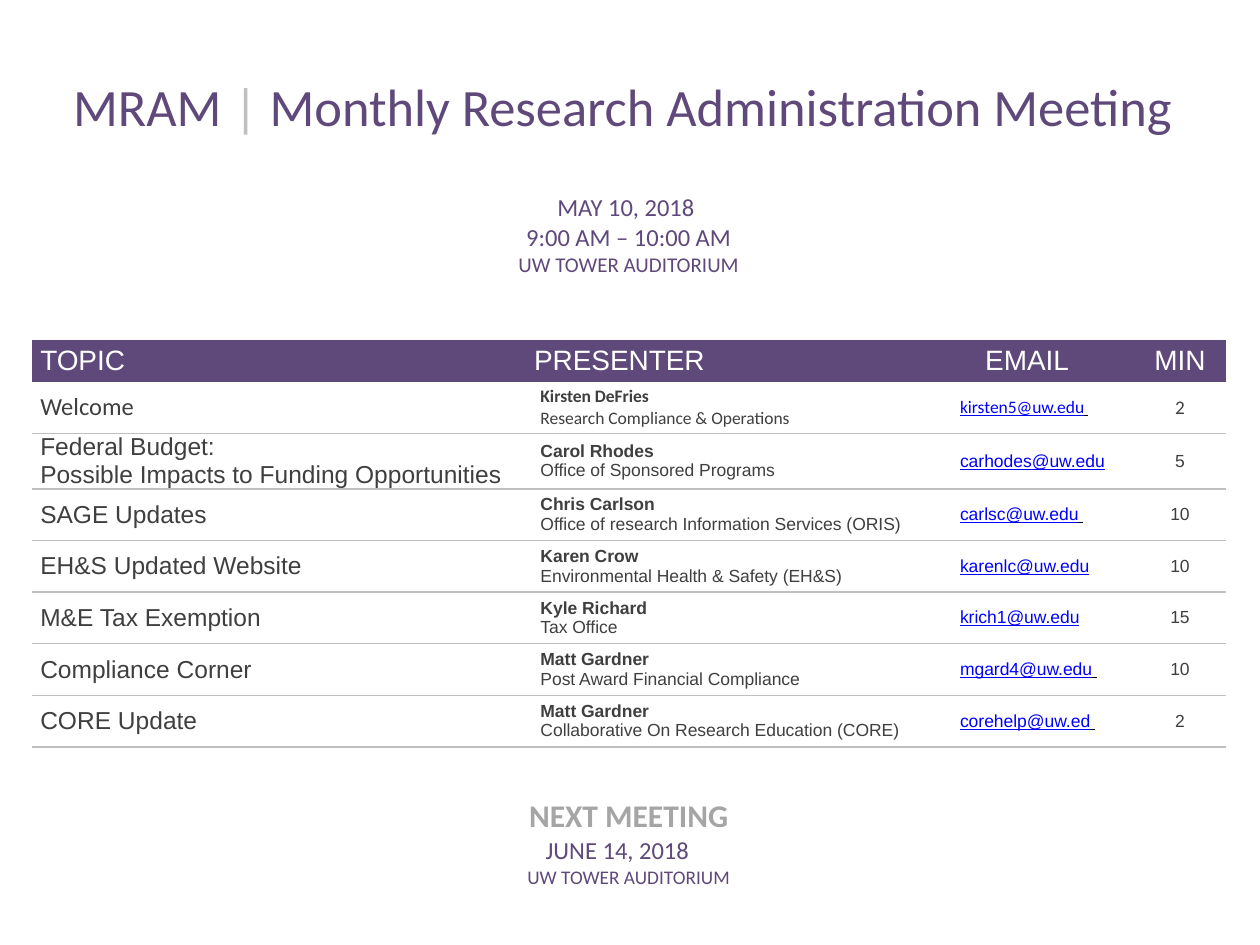
import pptx
import pptx.dml.color
import pptx.enum.text
import pptx.oxml
import pptx.oxml.ns
import pptx.util

Inches, Pt = pptx.util.Inches, pptx.util.Pt
ALIGN, ANCHOR = pptx.enum.text.PP_ALIGN, pptx.enum.text.MSO_ANCHOR
PURPLE, SILVER, GRAY = "5F497A", "BFBFBF", "A5A5A5"
DARK, LINK, WHITE, BLACK = "3F3F3F", "0000FF", "FFFFFF", "000000"
NO_STYLE = "{2D5ABB26-0587-4C30-8999-92F81FD0307C}"

# Content
TITLE = [("MRAM ", PURPLE), ("|", SILVER), (" Monthly Research Administration Meeting ", PURPLE)]
WHEN = [("MAY 10, 2018 ", 14), ("9:00 AM – 10:00 AM", 14), ("UW TOWER AUDITORIUM", 12)]
HEADERS = ["TOPIC", "PRESENTER", "EMAIL", "MIN"]
# topic lines, presenter, office, email, underlined space after it, minutes
AGENDA = [
    (["Welcome"], "Kirsten DeFries", "Research Compliance & Operations",
     "kirsten5@uw.edu", True, 2),
    (["Federal Budget:", "Possible Impacts to Funding Opportunities"], "Carol Rhodes",
     "Office of Sponsored Programs", "carhodes@uw.edu", False, 5),
    (["SAGE Updates"], "Chris Carlson", "Office of research Information Services (ORIS)",
     "carlsc@uw.edu", True, 10),
    (["EH&S Updated Website"], "Karen Crow", "Environmental Health & Safety (EH&S)",
     "karenlc@uw.edu", False, 10),
    (["M&E Tax Exemption"], "Kyle Richard", "Tax Office", "krich1@uw.edu", False, 15),
    (["Compliance Corner"], "Matt Gardner", "Post Award Financial Compliance",
     "mgard4@uw.edu", True, 10),
    (["CORE Update"], "Matt Gardner", "Collaborative On Research Education (CORE)",
     "corehelp@uw.ed", True, 2),
]
# text, size, colour, bold, left indent
NEXT = [("NEXT MEETING", 18, GRAY, True, 0.18), ("JUNE 14, 2018", 14, PURPLE, False, 0),
        ("UW TOWER AUDITORIUM", 11, PURPLE, False, 0.18)]

COLS = [3.92, 3.33, 1.5, 0.73]
ROWS = [0.62, 1.58, 0.33] + [0.44 if len(a[0]) > 1 else 0.41 for a in AGENDA] + [1.13]


def rgb(color):
    return pptx.dml.color.RGBColor.from_string(color)


def style(font, size, color, name="Arial", bold=False):
    font.size, font.name, font.bold = Pt(size), name, bold
    font.color.rgb = rgb(color)


def setup(cell, fill=WHITE, left=0.07, right=0.07, bottom=0, anchor=ANCHOR.MIDDLE):
    cell.fill.solid()
    cell.fill.fore_color.rgb = rgb(fill)
    cell.margin_left, cell.margin_right = Inches(left), Inches(right)
    cell.margin_top, cell.margin_bottom = 0, Inches(bottom)
    cell.vertical_anchor = anchor
    return cell.text_frame


def rule_below(cell):
    ns = pptx.oxml.ns.nsdecls("a")
    line = pptx.oxml.parse_xml(
        f'<a:lnB {ns} w="12700"><a:solidFill><a:srgbClr val="{SILVER}"/></a:solidFill></a:lnB>')
    cell._tc.get_or_add_tcPr().insert(0, line)


def add_lines(tf, lines, align=ALIGN.LEFT):
    """Each line: text, size, colour, font name, bold, left indent."""
    for i, (text, size, color, name, bold, indent) in enumerate(lines):
        p = tf.paragraphs[0] if i == 0 else tf.add_paragraph()
        p.alignment = align
        if indent:
            p._p.get_or_add_pPr().set("marL", str(Inches(indent)))
        p.add_run().text = text
        style(p.font, size, color, name, bold)


prs = pptx.Presentation()
prs.slide_width, prs.slide_height = Inches(10), Inches(7.5)
s = prs.slides.add_slide(prs.slide_layouts[6])

# Table frame
table = s.shapes.add_table(len(ROWS), len(COLS), Inches(0.25), Inches(0.5),
                           Inches(sum(COLS)), Inches(sum(ROWS))).table
table.first_row = table.horz_banding = False
table._tbl.tblPr.find(pptx.oxml.ns.qn("a:tableStyleId")).text = NO_STYLE
for col, width in zip(table.columns, COLS):
    col.width = Inches(width)
for row, height in zip(table.rows, ROWS):
    row.height = Inches(height)
last = len(ROWS) - 1
for r in (0, 1, last):
    table.cell(r, 0).merge(table.cell(r, len(COLS) - 1))

# Title
p = setup(table.cell(0, 0), anchor=ANCHOR.BOTTOM).paragraphs[0]
p.alignment = ALIGN.CENTER
p.font.size, p.font.name = Pt(30), "Calibri"
for text, color in TITLE:
    run = p.add_run()
    run.text = text
    run.font.color.rgb = rgb(color)

# Date and place
add_lines(setup(table.cell(1, 0), bottom=0.08),
          [(text, size, PURPLE, "Calibri", False, 0) for text, size in WHEN], ALIGN.CENTER)

# Header row
for c, text in enumerate(HEADERS):
    tf = setup(table.cell(2, c), PURPLE, left=0.32 if text == "EMAIL" else 0.07)
    add_lines(tf, [(text, 16, WHITE, "Arial", False, 0)],
              ALIGN.CENTER if text == "MIN" else ALIGN.LEFT)

# Agenda rows
for r, (topic, presenter, office, email, tail, minutes) in enumerate(AGENDA, 3):
    name, min_size = ("Calibri", 11) if r == 3 else ("Arial", 10)
    cells = [table.cell(r, c) for c in range(len(COLS))]
    add_lines(setup(cells[0]), [(t, 14, DARK, name, False, 0) for t in topic])
    add_lines(setup(cells[1], left=0.12, right=0.12),
              [(presenter, 10, DARK, name, True, 0), (office, 10, DARK, name, False, 0)])
    tf = setup(cells[2], left=0.12, right=0)
    add_lines(tf, [(email, 10, LINK, name, False, 0)])
    p = tf.paragraphs[0]
    p.font.underline = True
    if tail:
        run = p.add_run()
        run.text = " "
        run.font.color.rgb = rgb(BLACK)
    add_lines(setup(cells[3]), [(str(minutes), min_size, DARK, name, False, 0)], ALIGN.CENTER)
    for cell in cells:
        rule_below(cell)

# Next meeting
add_lines(setup(table.cell(last, 0), right=0.25, anchor=ANCHOR.BOTTOM),
          [(text, size, color, "Calibri", bold, indent)
           for text, size, color, bold, indent in NEXT], ALIGN.CENTER)

prs.save("out.pptx")
